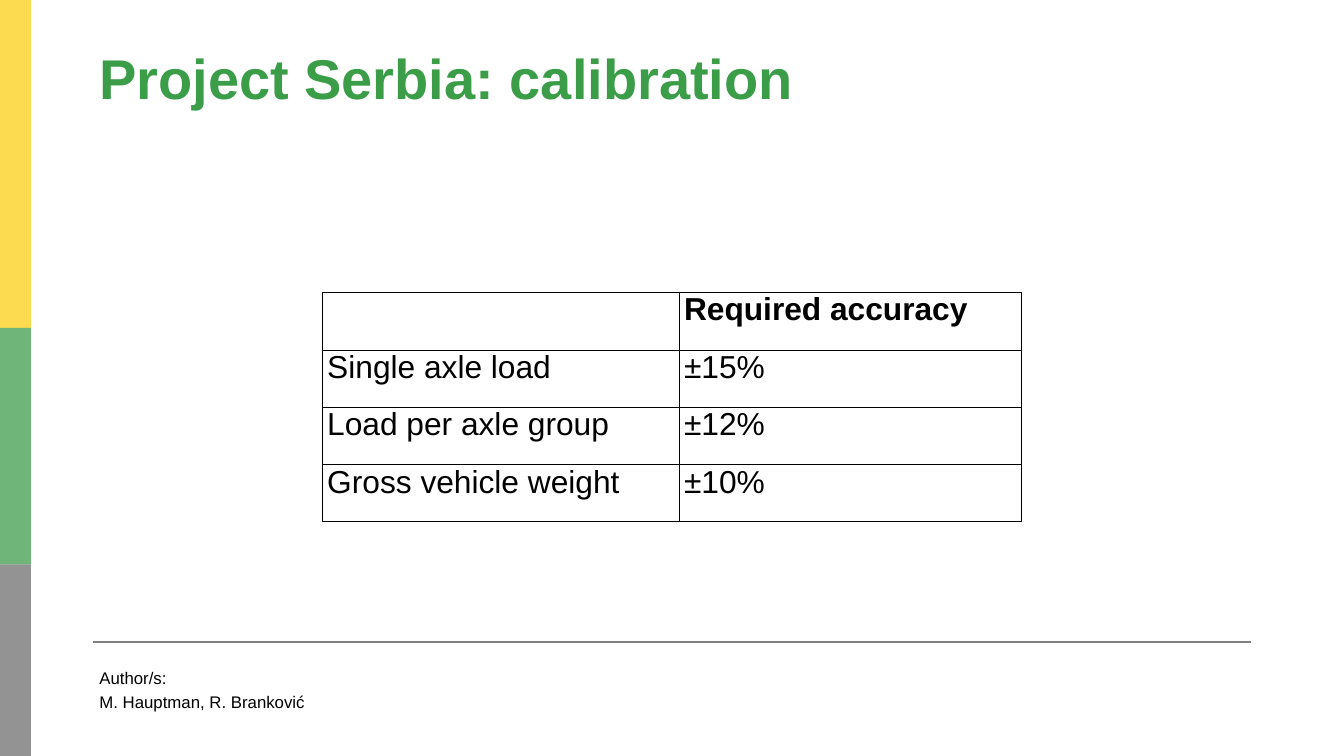
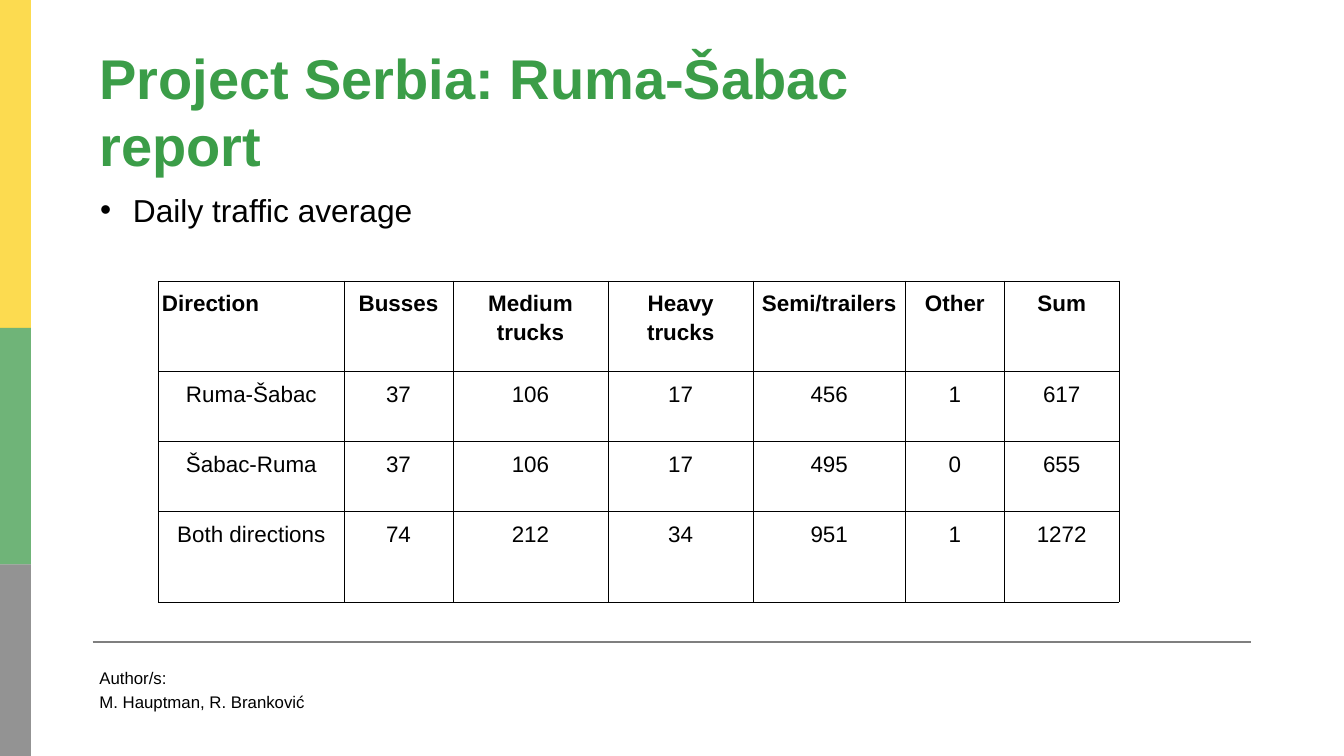
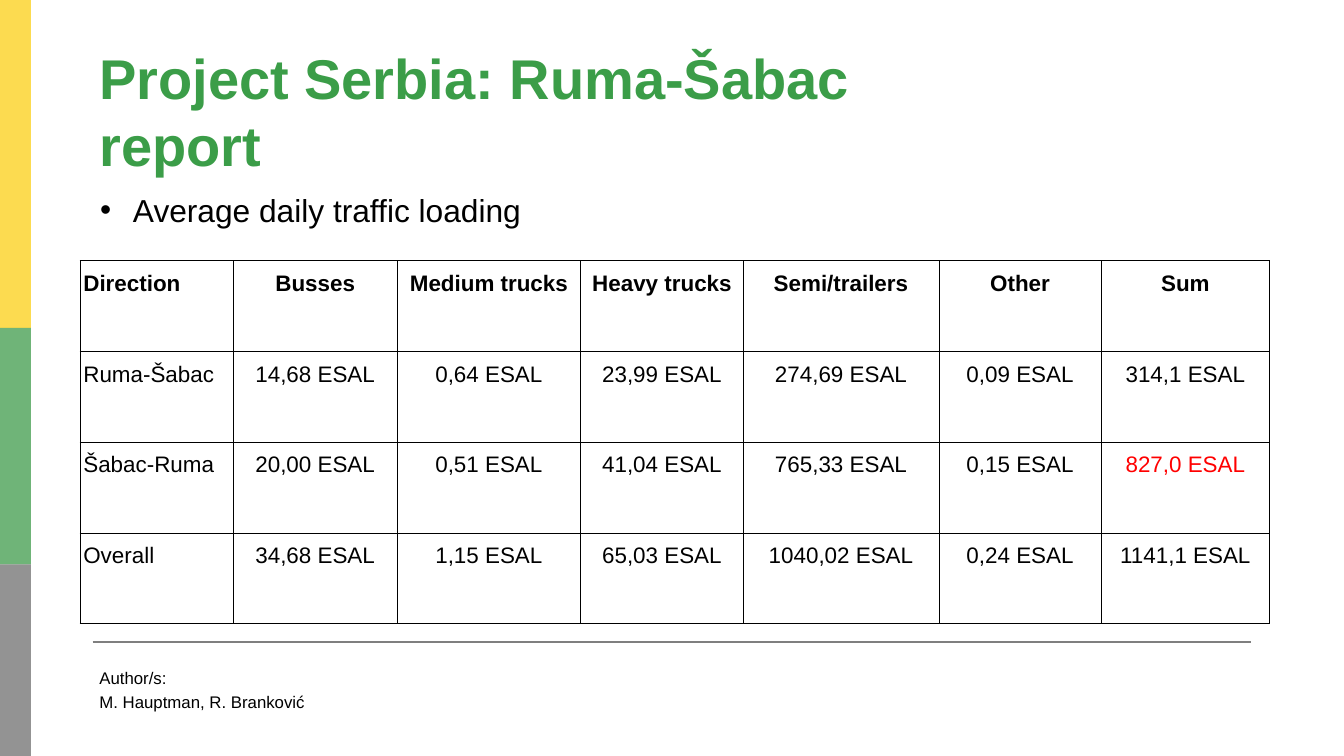
from dataclasses import dataclass

from lxml import etree
from pptx import Presentation
from pptx.dml.color import RGBColor
from pptx.enum.shapes import MSO_CONNECTOR, MSO_SHAPE
from pptx.enum.text import MSO_ANCHOR, PP_ALIGN
from pptx.oxml.ns import qn
from pptx.util import Inches, Pt

LEFT, MID, JUST = PP_ALIGN.LEFT, PP_ALIGN.CENTER, PP_ALIGN.JUSTIFY
TOP = MSO_ANCHOR.TOP
RECT = MSO_SHAPE.RECTANGLE
LINE = MSO_CONNECTOR.STRAIGHT

FONT = "Arial"
COLORS = {
    "yellow": "FBCF16", "green": "409C4B", "gray": "707070",
    "title": "3B9D48", "rule": "7F7F7F", "text": "000000", "alert": "FF0000",
}


@dataclass(frozen=True)
class Band:
    top: float
    end: float
    color: str


@dataclass(frozen=True)
class Style:
    size: float
    inset: tuple[float, float]
    border: float
    body: PP_ALIGN
    space: float | None = None
    after: float = 0


@dataclass(frozen=True)
class Grid:
    left: float
    top: float
    cols: list[float]
    rows: list[float]
    cells: list[list[str]]
    style: Style
    first: PP_ALIGN
    alert: tuple[int, int] | None = None


@dataclass(frozen=True)
class Page:
    title: str
    grid: Grid
    point: str = ""


BANDS = [Band(0, 4.88, "yellow"), Band(4.88, 8.4, "green"), Band(8.4, 11.25, "gray")]
AUTHORS = ["Author/s:", "M. Hauptman, R. Branković"]
HEAD = ["Direction", "Busses", "Medium trucks", "Heavy trucks",
        "Semi/trailers", "Other", "Sum"]
LARGE = Style(34, (0.07, 0), 0.5, JUST)
SMALL = Style(24, (0.05, 0.1), 0.6, MID, 1.15, 12)
REPORT = "Project Serbia: Ruma-Šabac report"

PAGES = [
    Page("Project Serbia: calibration", Grid(
        4.8, 4.35, [5.31, 5.08], [0.86] + [0.85] * 3,
        [["", "Required accuracy"],
         ["Single axle load", "±15%"],
         ["Load per axle group", "±12%"],
         ["Gross vehicle weight", "±10%"]],
        LARGE, JUST)),
    Page(REPORT, Grid(
        2.36, 4.18, [2.76, 1.62, 2.31, 2.16, 2.26, 1.48, 1.7],
        [1.35, 1.04, 1.04, 1.35],
        [HEAD,
         ["Ruma-Šabac", "37", "106", "17", "456", "1", "617"],
         ["Šabac-Ruma", "37", "106", "17", "495", "0", "655"],
         ["Both directions", "74", "212", "34", "951", "1", "1272"]],
        SMALL, MID), "Daily traffic average"),
    Page(REPORT, Grid(
        1.19, 3.88, [2.28, 2.44, 2.73, 2.42, 2.91, 2.42, 2.5], [1.35] * 4,
        [HEAD] + [[name] + [f"{load} ESAL" for load in loads] for name, *loads in [
            ("Ruma-Šabac", "14,68", "0,64", "23,99", "274,69", "0,09", "314,1"),
            ("Šabac-Ruma", "20,00", "0,51", "41,04", "765,33", "0,15", "827,0"),
            ("Overall", "34,68", "1,15", "65,03", "1040,02", "0,24", "1141,1")]],
        SMALL, LEFT, (2, 6)), "Average daily traffic loading"),
]


def rgb(name: str) -> RGBColor:
    return RGBColor.from_string(COLORS[name])


def add_run(para, text: str, size: float, color: str = "text", bold: bool = False) -> None:
    run = para.add_run()
    run.text = text
    font = run.font
    font.name, font.size, font.bold = FONT, Pt(size), bold
    font.color.rgb = rgb(color)


def add_box(slide, left: float, top: float, width: float, height: float):
    box = slide.shapes.add_textbox(Inches(left), Inches(top), Inches(width), Inches(height))
    frame = box.text_frame
    frame.word_wrap = True
    frame.vertical_anchor = TOP
    return frame


# Side bands and footer rule
def draw_frame(slide) -> None:
    for band in BANDS:
        bar = slide.shapes.add_shape(
            RECT, 0, Inches(band.top), Inches(0.46), Inches(band.end - band.top))
        bar.shadow.inherit = False
        bar.line.fill.background()
        bar.fill.solid()
        bar.fill.fore_color.rgb = rgb(band.color)
        tint = bar.fill._xPr.find(f".//{qn('a:srgbClr')}")
        etree.SubElement(tint, qn("a:alpha"), val="75000")
    rule = slide.shapes.add_connector(
        LINE, Inches(1.38), Inches(9.56), Inches(18.62), Inches(9.56))
    rule.line.color.rgb = rgb("rule")
    rule.line.width = Pt(2.25)
    etree.SubElement(rule._element.spPr, qn("a:effectLst"))


# Title, bullet point and authors
def draw_text(slide, page: Page) -> None:
    if page.point:
        para = add_box(slide, 1.38, 2.79, 17.25, 6.54).paragraphs[0]
        props = para._p.get_or_add_pPr()
        props.set("marL", str(Inches(0.5)))
        props.set("indent", str(Inches(-0.49)))
        etree.SubElement(props, qn("a:buFont"), typeface=FONT)
        etree.SubElement(props, qn("a:buChar"), char="•")
        add_run(para, page.point, 34)
    para = add_box(slide, 1.38, 0.6, 13.67, 1.95).paragraphs[0]
    add_run(para, page.title, 60, "title", True)
    frame = add_box(slide, 1.38, 9.89, 8.62, 1.09)
    add_run(frame.paragraphs[0], AUTHORS[0], 18)
    para = frame.add_paragraph()
    para.space_before = Pt(3.6)
    add_run(para, AUTHORS[1], 18)


def set_border(cell, width: float) -> None:
    props = cell._tc.get_or_add_tcPr()
    for side in ("lnL", "lnR", "lnT", "lnB"):
        edge = etree.SubElement(props, qn(f"a:{side}"), w=str(Pt(width)))
        fill = etree.SubElement(edge, qn("a:solidFill"))
        etree.SubElement(fill, qn("a:srgbClr"), val=COLORS["text"])


# Data table
def draw_grid(slide, grid: Grid) -> None:
    style = grid.style
    table = slide.shapes.add_table(
        len(grid.rows), len(grid.cols), Inches(grid.left), Inches(grid.top),
        Inches(sum(grid.cols)), Inches(sum(grid.rows))).table
    table.first_row = table.horz_banding = False
    for col, width in zip(table.columns, grid.cols):
        col.width = Inches(width)
    for row, height in zip(table.rows, grid.rows):
        row.height = Inches(height)
    for r, line in enumerate(grid.cells):
        for c, text in enumerate(line):
            cell = table.cell(r, c)
            cell.margin_left = cell.margin_right = Inches(style.inset[0])
            cell.margin_top = cell.margin_bottom = Inches(style.inset[1])
            set_border(cell, style.border)
            cell.fill.background()
            if not text:
                continue
            para = cell.text_frame.paragraphs[0]
            para.alignment = style.body if c else grid.first
            if text == HEAD[0]:
                para.alignment = LEFT
            para.line_spacing = style.space
            para.space_after = Pt(style.after)
            color = "alert" if (r, c) == grid.alert else "text"
            add_run(para, text, style.size, color, r == 0)


def main() -> None:
    deck = Presentation()
    deck.slide_width, deck.slide_height = Inches(20), Inches(11.25)
    for page in PAGES:
        slide = deck.slides.add_slide(deck.slide_layouts[6])
        draw_frame(slide)
        draw_text(slide, page)
        draw_grid(slide, page.grid)
    deck.save("out.pptx")


if __name__ == "__main__":
    main()
